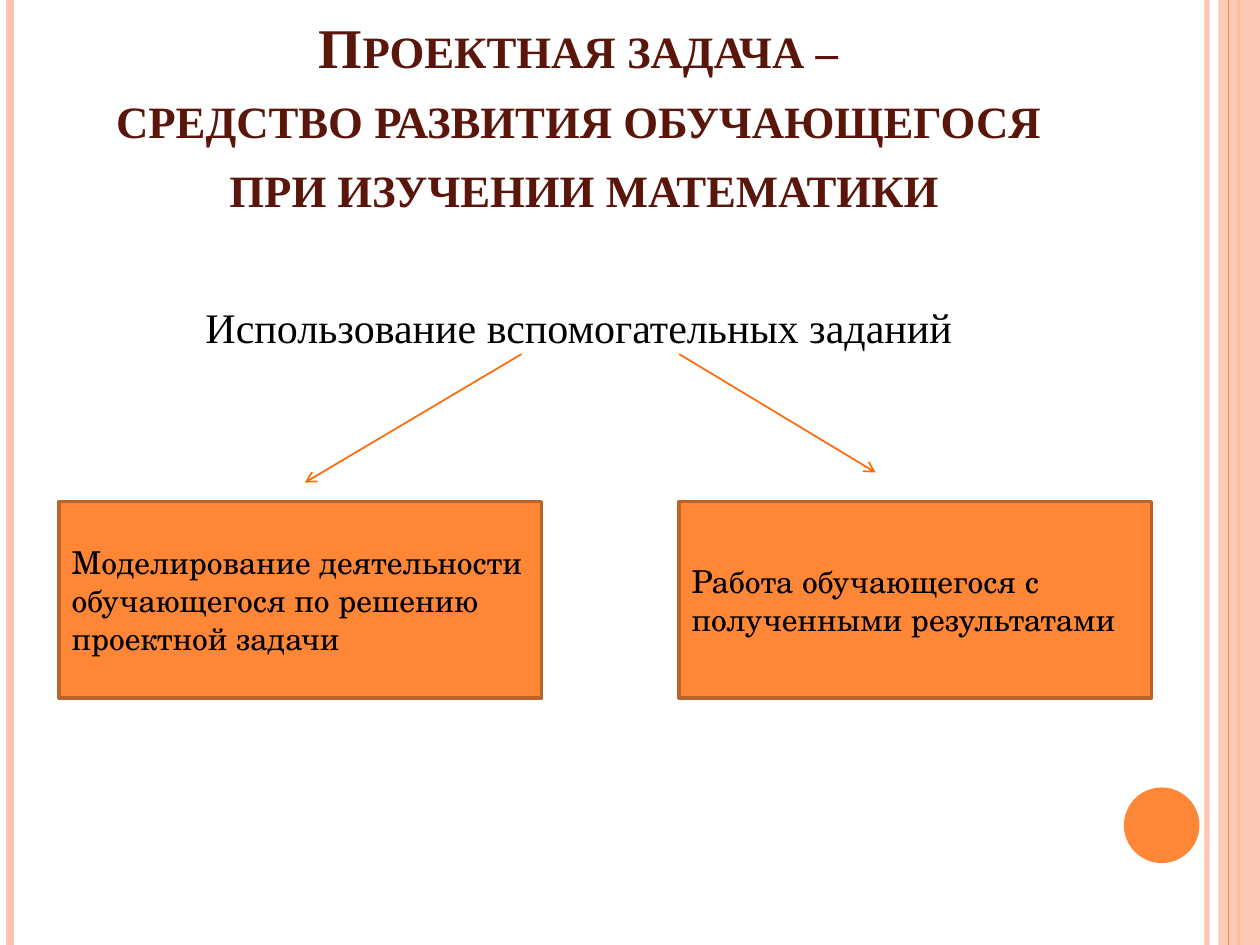
"""Builds a slide on the project task as a means of development."""
from lxml import etree
from pptx import Presentation
from pptx.dml.color import RGBColor
from pptx.enum.shapes import MSO_CONNECTOR, MSO_SHAPE
from pptx.enum.text import MSO_ANCHOR, MSO_AUTO_SIZE, PP_ALIGN
from pptx.oxml.ns import qn
from pptx.util import Inches, Pt

STRAIGHT = MSO_CONNECTOR.STRAIGHT
RECTANGLE, OVAL = MSO_SHAPE.RECTANGLE, MSO_SHAPE.OVAL
TOP, MIDDLE, BOTTOM = MSO_ANCHOR.TOP, MSO_ANCHOR.MIDDLE, MSO_ANCHOR.BOTTOM
LEFT, CENTER = PP_ALIGN.LEFT, PP_ALIGN.CENTER
NO_AUTOFIT = MSO_AUTO_SIZE.NONE

PEACH = RGBColor(0xFE, 0xC3, 0xAE)
ORANGE = RGBColor(0xFE, 0x86, 0x37)
ARROW_ORANGE = RGBColor(0xFF, 0x6B, 0x0A)
BROWN = RGBColor(0xBC, 0x63, 0x29)
MAROON = RGBColor(0x5A, 0x16, 0x0B)
BLACK = RGBColor(0, 0, 0)

SERIF, SCHOOLBOOK = "Times New Roman", "TeX Gyre Schola"
COLUMNS, ROWS = 100, 75
TITLE_ONLY = 5


def write(frame, text, *, size, font, color, align=LEFT, anchor=TOP,
          bold=False, small_caps=False, before=0, spacing=1.0):
    """Put one formatted paragraph into a text frame."""
    frame.word_wrap = True
    frame.auto_size = NO_AUTOFIT
    frame.vertical_anchor = anchor
    frame.text = text
    paragraph = frame.paragraphs[0]
    paragraph.alignment = align
    paragraph.space_before = Pt(before)
    paragraph.line_spacing = spacing
    for run in paragraph.runs:
        run.font.size, run.font.name, run.font.bold = Pt(size), font, bold
        run.font.color.rgb = color
        if small_caps:
            run.font._element.set("cap", "small")


def set_opacity(properties, percent):
    """Make the solid colour inside the given properties translucent."""
    color = properties.find(".//" + qn("a:srgbClr"))
    etree.SubElement(color, qn("a:alpha")).set("val", str(percent * 1000))


class SlideBuilder:
    """Holds the slide, its grid and the style of its elements."""

    def __init__(self, presentation):
        self.slide = presentation.slides.add_slide(
            presentation.slide_layouts[TITLE_ONLY])
        self.column = presentation.slide_width / COLUMNS
        self.row = presentation.slide_height / ROWS

    def grid(self, *values):
        """Turn alternating columns and rows into lengths."""
        units = (self.column, self.row) * 2
        return [round(value * unit) for value, unit in zip(values, units)]

    def title(self, text, *place):
        """Place and format the title."""
        title = self.slide.shapes.title
        title.left, title.top, title.width, title.height = self.grid(*place)
        write(title.text_frame, text, size=32, font=SERIF, color=MAROON, align=CENTER,
              anchor=BOTTOM, bold=True, small_caps=True, spacing=1.04)

    def statement(self, text, *place):
        """Add the central statement."""
        box = self.slide.shapes.add_textbox(*self.grid(*place))
        write(box.text_frame, text, size=24, font=SERIF, color=BLACK,
              align=CENTER, before=6)

    def shape(self, preset, *place, fill=ORANGE, opacity=100, border=None):
        """Add a filled preset shape."""
        shape = self.slide.shapes.add_shape(preset, *self.grid(*place))
        shape.shadow.inherit = False
        shape.fill.solid()
        shape.fill.fore_color.rgb = fill
        if opacity < 100:
            set_opacity(shape._element.spPr, opacity)
        if border is None:
            shape.line.fill.background()
        else:
            shape.line.color.rgb = border
            shape.line.width = Pt(2)
        return shape

    def card(self, text, *place):
        """Add a bordered rectangle with text."""
        card = self.shape(RECTANGLE, *place, border=BROWN)
        write(card.text_frame, text, size=18, font=SCHOOLBOOK, color=BLACK,
              anchor=MIDDLE)

    def line(self, *ends, color, width, opacity=100):
        """Add a straight line."""
        line = self.slide.shapes.add_connector(STRAIGHT, *self.grid(*ends))
        line.line.color.rgb = color
        line.line.width = Pt(width)
        properties = line._element.spPr
        etree.SubElement(properties, qn("a:effectLst"))
        if opacity < 100:
            set_opacity(properties, opacity)
        return line

    def stripe(self, column, color, width, opacity=100):
        """Add a vertical line over the full height."""
        self.line(column, 0, column, ROWS, color=color, width=width, opacity=opacity)

    def arrow(self, *ends):
        """Add a line with an open arrowhead at its end."""
        arrow = self.line(*ends, color=ARROW_ORANGE, width=1)
        outline = arrow.line._get_or_add_ln()
        etree.SubElement(outline, qn("a:tailEnd")).set("type", "arrow")


def main():
    """Build and save the slide."""
    presentation = Presentation()
    presentation.slide_width, presentation.slide_height = Inches(10), Inches(7.5)
    builder = SlideBuilder(presentation)

    builder.stripe(95.8, PEACH, 3, opacity=93)
    builder.stripe(0.8, PEACH, 4.5)
    builder.stripe(98.3, ORANGE, 1.5)
    builder.shape(RECTANGLE, 96.7, 0, 3.3, ROWS, fill=PEACH, opacity=87)
    builder.stripe(97.5, ORANGE, 0.75)
    builder.shape(OVAL, 89.2, 62.5, 6, 6)

    builder.title("Проектная задача – \vсредство развития обучающегося \v"
                  "при изучении математики", 5.5, 3.1, 81.7, 14.8)
    builder.statement("Использование вспомогательных заданий ", 5.5, 23.4, 81.7, 47)

    card_top, card_height = 39.8, 15.6
    builder.card("Моделирование деятельности обучающегося по решению проектной задачи",
                 4.7, card_top, 38.3, card_height)
    builder.card("Работа обучающегося с полученными результатами",
                 53.9, card_top, 37.5, card_height)

    arrow_top = 28.1
    builder.arrow(41.4, arrow_top, 24.2, 38.3)
    builder.arrow(53.9, arrow_top, 69.5, 37.5)

    presentation.save("out.pptx")


if __name__ == "__main__":
    main()
